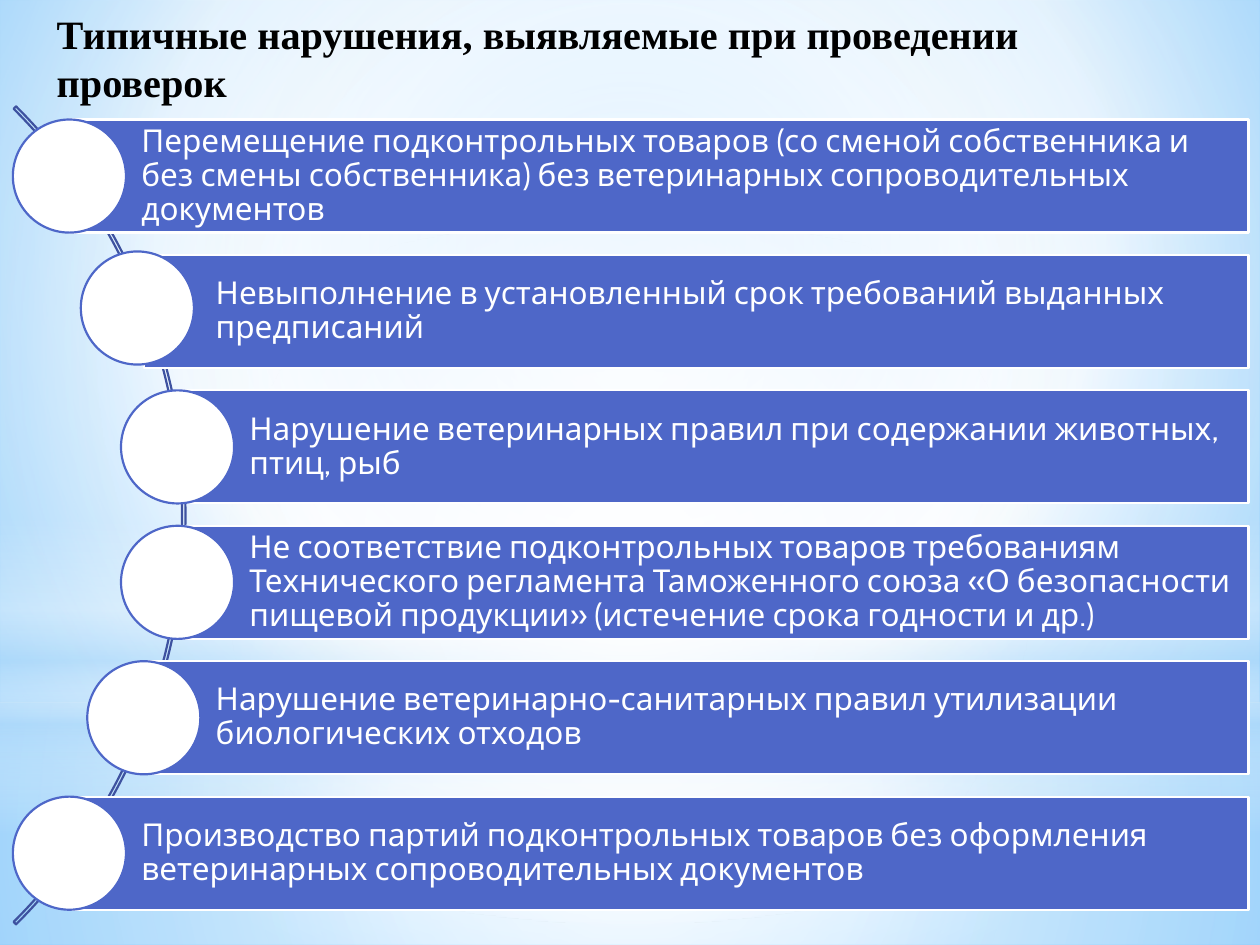
from dataclasses import dataclass
from typing import Any, Optional

from lxml import etree
from pptx import Presentation
from pptx.dml import color
from pptx.enum import shapes, text
from pptx.oxml import ns
from pptx.util import Cm, Pt

KIND = shapes.MSO_SHAPE
BLUE, WHITE = "4E67C8", "FFFFFF"
TOP, PITCH, SIZE, RIGHT = 2.41, 2.73, 2.28, 25.17


@dataclass
class Stop:
    at: int
    tone: str
    alpha: int = 100


@dataclass
class Layer:
    kind: Any
    top: float
    high: float
    stops: list[Stop]
    focus: Optional[tuple[int, int, int, int]] = (50, 50, 50, 50)


@dataclass
class Item:
    left: float
    words: str
    dx: float = 0
    dy: float = 0


LAYERS = [
    Layer(KIND.RECTANGLE, 14.17, 4.88,
          [Stop(0, WHITE, 91), Stop(37, WHITE, 76), Stop(100, "B4DCFA", 79)]),
    Layer(KIND.RECTANGLE, 0, 14.17,
          [Stop(0, WHITE, 89), Stop(48, WHITE, 62), Stop(100, "B4DCFA", 79)]),
    Layer(KIND.RECTANGLE, 10.46, 6.35,
          [Stop(0, WHITE, 0), Stop(29, WHITE, 30), Stop(45, "B4DCFA", 40),
           Stop(55, WHITE, 26), Stop(65, "B4DCFA", 60), Stop(100, WHITE, 0)], None),
    Layer(KIND.OVAL, 4.45, 14.17, [Stop(0, WHITE), Stop(56, WHITE, 0)]),
]
ITEMS = [
    Item(1.4, "Перемещение подконтрольных товаров (со сменой собственника и без смены "
              "собственника) без ветеринарных сопроводительных документов"),
    Item(2.9, "Невыполнение в установленный срок требований выданных предписаний", -0.13, -0.07),
    Item(3.58, "Нарушение ветеринарных правил при содержании животных, птиц, рыб"),
    Item(3.58, "Не соответствие подконтрольных товаров требованиям Технического регламента "
               "Таможенного союза «О безопасности пищевой продукции» "
               "(истечение срока годности и др.)"),
    Item(2.9, "Нарушение ветеринарно-санитарных правил утилизации биологических отходов"),
    Item(1.4, "Производство партий подконтрольных товаров без оформления ветеринарных "
              "сопроводительных документов"),
]


def tint(tone: str) -> color.RGBColor:
    return color.RGBColor.from_string(tone)


def style(obj: Any, **vals: Any) -> None:
    for key, val in vals.items():
        setattr(obj, key, val)


def blend(fill: Any, root: Any, stops: list[Stop], focus: Optional[tuple]) -> None:
    fill.gradient()
    grad = root.find(".//" + ns.qn("a:gradFill"))
    for kid in list(grad):
        grad.remove(kid)

    def add(base: Any, tag: str, **vals: Any) -> Any:
        return etree.SubElement(base, ns.qn("a:" + tag), {k: str(v) for k, v in vals.items()})

    row = add(grad, "gsLst")
    for stop in stops:
        tone = add(add(row, "gs", pos=stop.at * 1000), "srgbClr", val=stop.tone)
        if stop.alpha < 100:
            add(tone, "alpha", val=stop.alpha * 1000)
    if focus is None:
        add(grad, "lin", ang=5400000, scaled=0)
    else:
        sides = {k: v * 1000 for k, v in zip("ltrb", focus)}
        add(add(grad, "path", path="circle"), "fillToRect", **sides)


def draw(slide: Any, kind: Any, left: float, top: float, wide: float, high: float,
         fill: Optional[str] = None, line: Optional[str] = None) -> Any:
    shape = slide.shapes.add_shape(kind, Cm(left), Cm(top), Cm(wide), Cm(high))
    shape.shadow.inherit = False
    if fill:
        shape.fill.solid()
        shape.fill.fore_color.rgb = tint(fill)
    else:
        shape.fill.background()
    if line:
        shape.line.color.rgb = tint(line)
        shape.line.width = Pt(1.25)
    else:
        shape.line.fill.background()
    return shape


def write(shape: Any, words: str, frame: dict, para: dict, font: dict, tone: str) -> None:
    box = shape.text_frame
    style(box, text=words, word_wrap=True, **frame)
    first = box.paragraphs[0]
    style(first, alignment=text.PP_ALIGN.LEFT, **para)
    style(first.runs[0].font, **font)
    first.runs[0].font.color.rgb = tint(tone)


def layer(slide: Any, part: Layer) -> None:
    shape = draw(slide, part.kind, 0, part.top, 25.4, part.high)
    blend(shape.fill, shape.element, part.stops, part.focus)


def entry(slide: Any, item: Item, top: float) -> None:
    bar = draw(slide, KIND.RECTANGLE, item.left, top, RIGHT - item.left, SIZE, BLUE, WHITE)
    pad = Cm(0.13)
    write(bar, item.words,
          dict(vertical_anchor=text.MSO_ANCHOR.MIDDLE, margin_left=Cm(1.45),
               margin_top=pad, margin_right=pad, margin_bottom=pad),
          dict(line_spacing=0.9, space_after=Pt(6.3)),
          dict(name="Cabin", size=Pt(18)), WHITE)
    draw(slide, KIND.OVAL, item.left - SIZE / 2 + item.dx, top + item.dy,
         SIZE, SIZE, WHITE, BLUE)


def main() -> None:
    deck = Presentation()
    style(deck, slide_width=Cm(25.4), slide_height=Cm(19.05))
    slide = deck.slides.add_slide(deck.slide_layouts[5])
    blend(slide.background.fill, slide.element,
          [Stop(0, "9ED5FF"), Stop(60, WHITE), Stop(100, "5BB9FF")], (20, 10, 20, 60))
    for part in LAYERS:
        layer(slide, part)
    arc = draw(slide, KIND.BLOCK_ARC, -19.58, -1.27, 23.32, 23.32, line="3E52A0")
    for num, val in enumerate((189, 27, 0.003)):
        arc.adjustments[num] = val
    for num, item in enumerate(ITEMS):
        entry(slide, item, TOP + num * PITCH)
    title = slide.shapes.title
    style(title, left=Cm(0.89), top=Cm(0.05), width=Cm(23.3), height=Cm(1.24))
    write(title, "Типичные нарушения, выявляемые при проведении проверок",
          dict(vertical_anchor=text.MSO_ANCHOR.TOP, auto_size=text.MSO_AUTO_SIZE.NONE),
          dict(space_before=Pt(0)),
          dict(name="Times New Roman", size=Pt(23), bold=True), "000000")
    title.element.getparent().append(title.element)
    deck.save("out.pptx")


if __name__ == "__main__":
    main()
